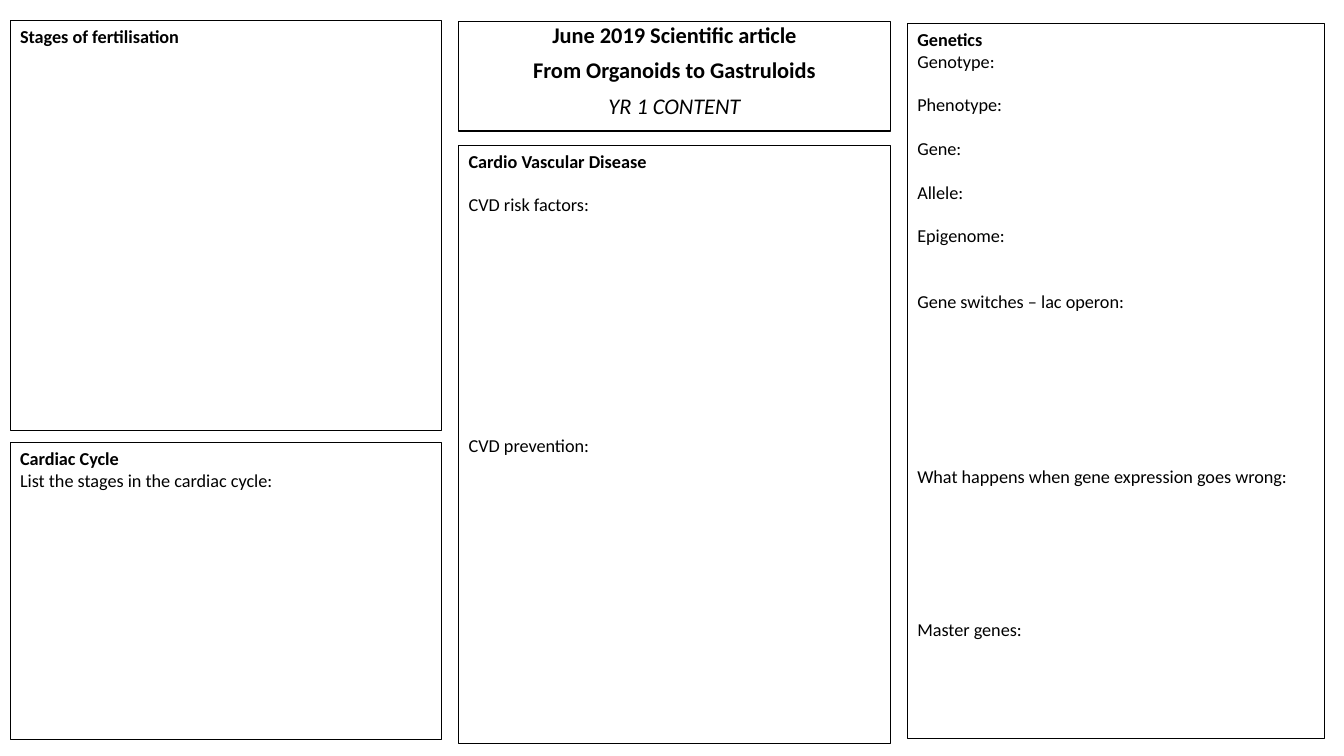
import pptx
import pptx.dml.color
import pptx.enum.text
import pptx.util

Inches = pptx.util.Inches
Pt = pptx.util.Pt

FONT = "Calibri"
INK = "000000"
PAPER = "FFFFFF"
BLANK_LINE = 15.6

TITLE_AREA = (4.55, 0.21, 4.28, 1.09)
TITLE_LINES = [
    ("June 2019 Scientific article", True, False),
    ("From Organoids to Gastruloids", True, False),
    ("YR 1 CONTENT", False, True),
]

# heading, area, prompts
TOPICS = [
    ("Stages of fertilisation", (0.1, 0.2, 4.28, 4.07), []),
    ("Genetics", (9, 0.23, 4.14, 7.1), [
        ("Genotype:", 0),
        ("Phenotype:", 1),
        ("Gene:", 1),
        ("Allele:", 1),
        ("Epigenome:", 1),
        ("Gene switches – lac operon:", 2),
        ("What happens when gene expression goes wrong:", 7),
        ("Master genes:", 6),
    ]),
    ("Cardio Vascular Disease", (4.55, 1.44, 4.28, 5.94), [
        ("CVD risk factors:", 1),
        ("CVD prevention:", 10),
    ]),
    ("Cardiac Cycle", (0.1, 4.39, 4.28, 2.95), [
        ("List the stages in the cardiac cycle:", 0),
    ]),
]


def color(hex_code):
    return pptx.dml.color.RGBColor.from_string(hex_code)


def add_panel(slide, area):
    panel = slide.shapes.add_textbox(*map(Inches, area))
    panel.line.color.rgb = color(INK)
    panel.line.width = Pt(0.75)
    panel.text_frame.word_wrap = True
    return panel


def write_lines(panel, lines, size):
    frame = panel.text_frame
    for index, (text, bold, italic, space_before) in enumerate(lines):
        line = frame.add_paragraph() if index else frame.paragraphs[0]
        line.text = text
        line.space_before = Pt(space_before)
        line.font.name = FONT
        line.font.size = Pt(size)
        line.font.bold = bold
        line.font.italic = italic
        line.font.color.rgb = color(INK)


def main():
    deck = pptx.Presentation()
    deck.slide_width = Inches(13.33)
    deck.slide_height = Inches(7.5)
    slide = deck.slides.add_slide(deck.slide_layouts[6])

    title = add_panel(slide, TITLE_AREA)
    title.fill.solid()
    title.fill.fore_color.rgb = color(PAPER)
    write_lines(title, [(*line, 10) for line in TITLE_LINES], 16)
    for line in title.text_frame.paragraphs:
        line.alignment = pptx.enum.text.PP_ALIGN.CENTER
        line.line_spacing = 0.8

    for heading, area, prompts in TOPICS:
        lines = [(heading, True, False, 0)]
        lines += [(prompt, False, False, gap * BLANK_LINE) for prompt, gap in prompts]
        write_lines(add_panel(slide, area), lines, 13)

    deck.save("out.pptx")


if __name__ == "__main__":
    main()
